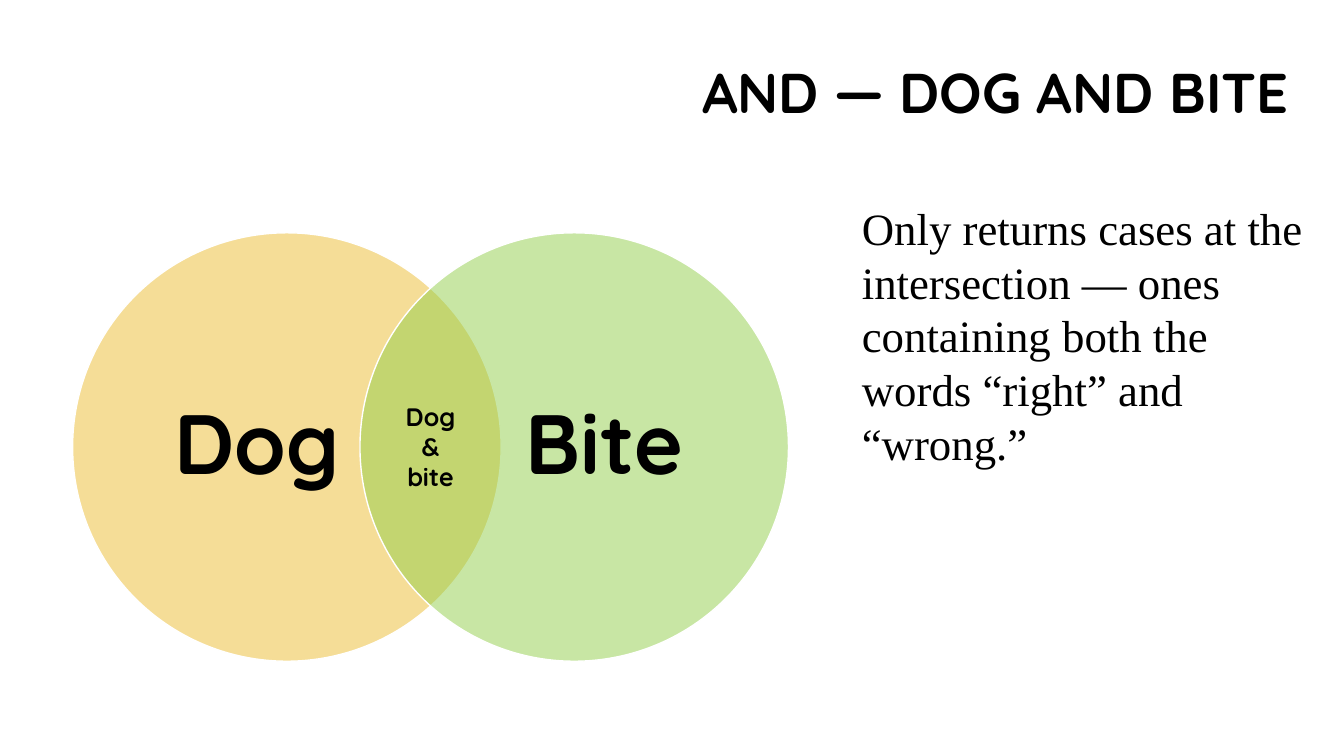
from dataclasses import dataclass

from lxml import etree
from pptx import Presentation
from pptx.dml.color import RGBColor
from pptx.enum.shapes import MSO_SHAPE
from pptx.enum.text import MSO_ANCHOR, MSO_AUTO_SIZE, PP_ALIGN
from pptx.oxml.ns import qn
from pptx.util import Inches, Pt

OVAL = MSO_SHAPE.OVAL
TOP, MIDDLE = MSO_ANCHOR.TOP, MSO_ANCHOR.MIDDLE
NO_FIT = MSO_AUTO_SIZE.NONE
LEFT, CENTER, RIGHT = PP_ALIGN.LEFT, PP_ALIGN.CENTER, PP_ALIGN.RIGHT


@dataclass(frozen=True)
class Theme:
    heading: str = "Quicksand"
    body: str = "Times New Roman"
    ink: str = "000000"
    paper: str = "FFFFFF"
    dog: str = "ECBD31"
    bite: str = "92CE4A"
    opacity: int = 50
    title_size: int = 40
    body_size: int = 32
    circle_size: int = 60
    overlap_size: int = 18


@dataclass(frozen=True)
class Box:
    left: float
    top: float
    width: float
    height: float

    def inner(self, left, top, width, height):
        return Box(self.left + left * self.width, self.top + top * self.height,
                   width * self.width, height * self.height)

    def lengths(self):
        return [Inches(value) for value in (self.left, self.top, self.width, self.height)]


THEME = Theme()
PAGE = Box(0, 0, 13.33, 7.5)
TITLE_BOX = Box(6.69, 0.56, 6.19, 0.78)
BODY_BOX = Box(8.45, 1.94, 4.76, 2.26)
VENN_BOX = Box(0.72, 2.31, 7.1, 4.25)


def apply(target, values):
    for name, value in values.items():
        setattr(target, name, value)


def write(shape, words, size, font=THEME.heading, bold=True, align=CENTER,
          anchor=MIDDLE, spacing=None, inset=None):
    frame = shape.text_frame
    apply(frame, {"word_wrap": True, "auto_size": NO_FIT, "vertical_anchor": anchor})
    if inset is not None:
        apply(frame, {f"margin_{side}": Inches(inset)
                      for side in ("left", "top", "right", "bottom")})
    para = frame.paragraphs[0]
    apply(para, {"alignment": align, "line_spacing": spacing})
    span = para.add_run()
    span.text = words
    apply(span.font, {"name": font, "size": Pt(size), "bold": bold})
    span.font.color.rgb = RGBColor.from_string(THEME.ink)


def add_title(page, box):
    title = page.shapes.title
    apply(title, dict(zip(("left", "top", "width", "height"), box.lengths())))
    write(title, "AND — DOG AND BITE", THEME.title_size, align=RIGHT, spacing=0.9)


def add_body(page, box):
    body = page.shapes.add_textbox(*box.lengths())
    write(body, "Only returns cases at the intersection — ones containing both "
                "the words “right” and “wrong.”",
          THEME.body_size, font=THEME.body, bold=False, align=LEFT, anchor=TOP)


def add_circle(group, box, color):
    circle = group.shapes.add_shape(OVAL, *box.lengths())
    circle.shadow.inherit = False
    circle.fill.solid()
    circle.fill.fore_color.rgb = RGBColor.from_string(color)
    tint = circle.element.find(".//" + qn("a:srgbClr"))
    etree.SubElement(tint, qn("a:alpha"), val=str(THEME.opacity * 1000))
    circle.line.color.rgb = RGBColor.from_string(THEME.paper)
    circle.line.width = Pt(1)


def add_venn(page, box):
    group = page.shapes.add_group_shape()
    share = box.height / box.width
    sets = (("Dog", THEME.dog, 0, 0.14), ("Bite", THEME.bite, 1 - share, 0.28))
    for words, color, start, indent in sets:
        circle_box = box.inner(start, 0, share, 1)
        add_circle(group, circle_box, color)
        label = group.shapes.add_textbox(*circle_box.inner(indent, 0.12, 0.58, 0.76).lengths())
        write(label, words, THEME.circle_size, spacing=0.9, inset=0)
    width, height = 0.75 / box.width, 1.01 / box.height
    overlap_box = box.inner((1 - width) / 2, (1 - height) / 2, width, height)
    overlap = page.shapes.add_textbox(*overlap_box.lengths())
    write(overlap, "Dog & bite", THEME.overlap_size, anchor=TOP)


def main():
    deck = Presentation()
    apply(deck, {"slide_width": Inches(PAGE.width), "slide_height": Inches(PAGE.height)})
    page = deck.slides.add_slide(deck.slide_layouts.get_by_name("Title Only"))
    page.background.fill.solid()
    page.background.fill.fore_color.rgb = RGBColor.from_string(THEME.paper)
    add_title(page, TITLE_BOX)
    add_body(page, BODY_BOX)
    add_venn(page, VENN_BOX)
    deck.save("out.pptx")


if __name__ == "__main__":
    main()
